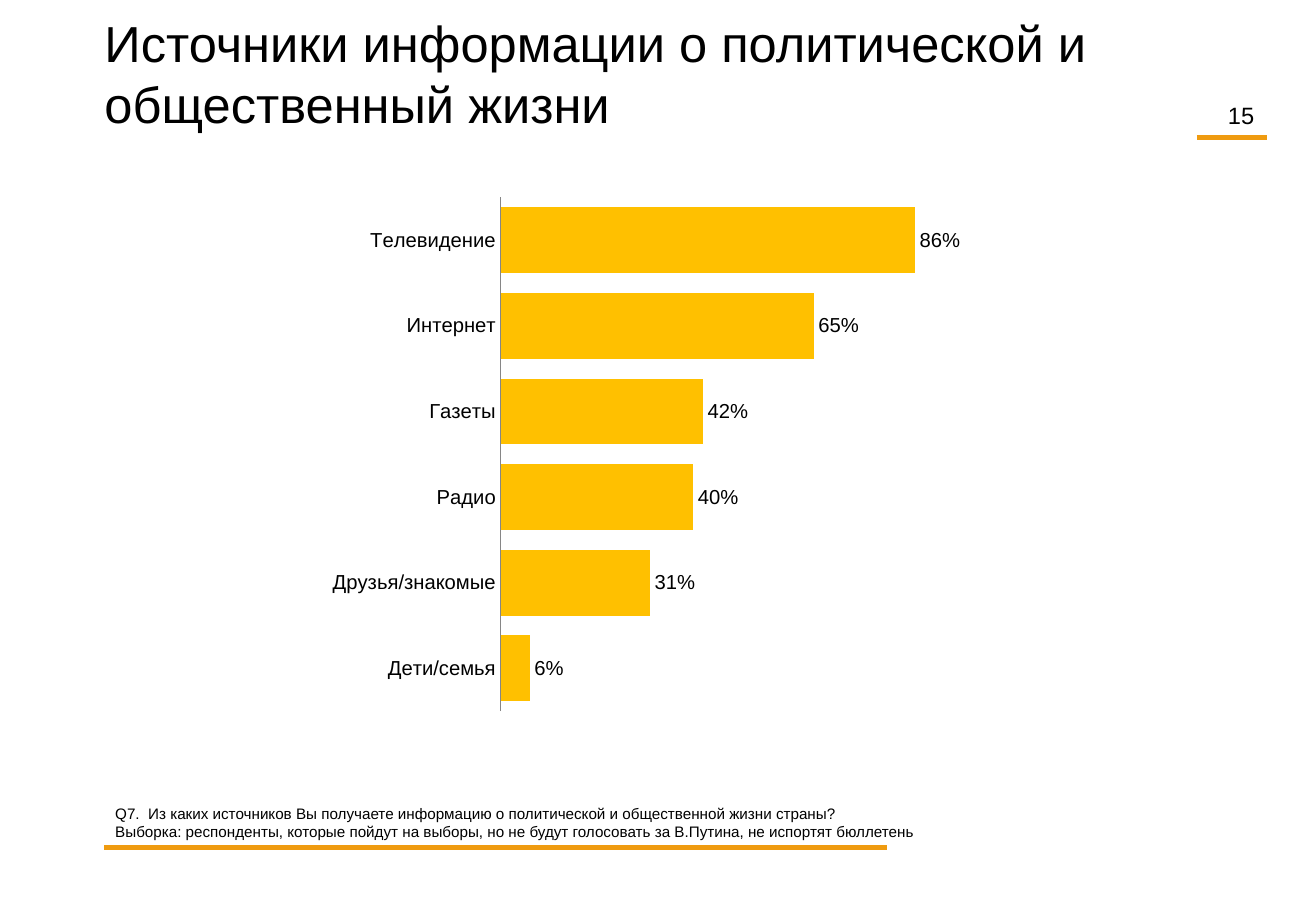
import pptx
import pptx.chart.data
import pptx.dml.color
import pptx.enum.chart
import pptx.enum.shapes
import pptx.enum.text
import pptx.oxml
import pptx.oxml.ns
import pptx.util
from lxml import etree

Inches, Pt = pptx.util.Inches, pptx.util.Pt
RGB = pptx.dml.color.RGBColor
LEFT = pptx.enum.text.PP_ALIGN.LEFT
RIGHT = pptx.enum.text.PP_ALIGN.RIGHT
qn = pptx.oxml.ns.qn

BLACK = RGB(0, 0, 0)
WHITE = RGB(255, 255, 255)
GREY = RGB(0x86, 0x86, 0x86)
ORANGE = RGB(0xEF, 0x9B, 0x10)
GOLD = RGB(0xFF, 0xC0, 0x00)
FACE = "Arial"
PERCENT = "#,##0%"

# Lines, place (left, top, width, height), size, side inset, alignment
TEXTS = [
    (["Источники информации о политической и общественный жизни"],
     (0.86, 0.05, 8.98, 1.11), 30, 0, LEFT),
    (["15"], (9.84, 0.78, 0.58, 0.29), 14, 0.1, RIGHT),
    (["Q7.  Из каких источников Вы получаете информацию о политической "
      "и общественной жизни страны?",
      "Выборка: респонденты, которые пойдут на выборы, но не будут "
      "голосовать за В.Путина, не испортят бюллетень"],
     (0.85, 6.57, 9.61, 0.4), 9, 0.1, LEFT),
]
RULES = [(0.86, 7.3, 6.98), (9.85, 10.43, 1.13)]  # left, right, height
SOURCES = {
    "Телевидение": 0.86,
    "Интернет": 0.65,
    "Газеты": 0.42,
    "Радио": 0.40,
    "Друзья/знакомые": 0.31,
    "Дети/семья": 0.06,
}
CHART = (1.56, 1.62, 6.92, 4.24)
PLOT = {"x": 0.37, "y": 0, "w": 0.63, "h": 1}  # shares of the chart


def add_text(slide, lines, place, size, inset, align):
    frame = slide.shapes.add_textbox(*map(Inches, place)).text_frame
    frame.word_wrap = True
    frame.margin_left = frame.margin_right = Inches(inset)
    frame.text = "\n".join(lines)
    for para in frame.paragraphs:
        para.alignment = align
        set_font(para.font, size)


def set_font(font, size):
    font.name = FACE
    font.size = Pt(size)
    font.color.rgb = BLACK


def add_rule(slide, left, right, top):
    rule = slide.shapes.add_connector(
        pptx.enum.shapes.MSO_CONNECTOR.STRAIGHT,
        Inches(left), Inches(top), Inches(right), Inches(top))
    rule.line.color.rgb = ORANGE
    rule.line.width = Pt(3)
    etree.SubElement(rule._element.spPr, qn("a:effectLst"))


def set_plot(chart):
    """Fix the inner plot area at the shares in PLOT."""
    area = chart._chartSpace.chart.plotArea
    for old in area.findall(qn("c:layout")):
        area.remove(old)
    layout = etree.Element(qn("c:layout"))
    manual = etree.SubElement(layout, qn("c:manualLayout"))
    parts = [("layoutTarget", "inner"), ("xMode", "edge"), ("yMode", "edge")]
    for tag, val in parts + list(PLOT.items()):
        etree.SubElement(manual, qn("c:" + tag)).set("val", str(val))
    area.insert(0, layout)


def add_bars(slide):
    enum = pptx.enum.chart
    data = pptx.chart.data.CategoryChartData(number_format=PERCENT)
    data.categories = list(SOURCES)
    data.add_series("Series 1", list(SOURCES.values()))
    chart = slide.shapes.add_chart(
        enum.XL_CHART_TYPE.BAR_CLUSTERED, *map(Inches, CHART), data).chart
    chart.has_legend = chart.has_title = False
    set_font(chart.font, 12)

    names = chart.category_axis
    names.reverse_order = True
    names.major_tick_mark = enum.XL_TICK_MARK.NONE
    names.format.line.color.rgb = GREY
    names.format.line.width = Pt(0.75)

    scale = chart.value_axis
    scale.minimum_scale, scale.maximum_scale = 0, 1.1
    scale.has_major_gridlines = False
    scale.visible = False

    plot = chart.plots[0]
    plot.gap_width = 30
    plot.vary_by_categories = False
    fill = plot.series[0].format.fill
    fill.solid()
    fill.fore_color.rgb = GOLD
    plot.has_data_labels = True
    labels = plot.data_labels
    labels.show_value = True
    labels.number_format = PERCENT
    labels.number_format_is_linked = False
    labels.position = enum.XL_LABEL_POSITION.OUTSIDE_END
    set_font(labels.font, 12)
    set_plot(chart)


def main():
    deck = pptx.Presentation()
    deck.slide_width, deck.slide_height = Inches(10.83), Inches(7.5)
    slide = deck.slides.add_slide(deck.slide_layouts[6])
    slide.background.fill.solid()
    slide.background.fill.fore_color.rgb = WHITE
    for rule in RULES:
        add_rule(slide, *rule)
    add_bars(slide)
    for text in TEXTS:
        add_text(slide, *text)
    deck.save("out.pptx")


if __name__ == "__main__":
    main()
